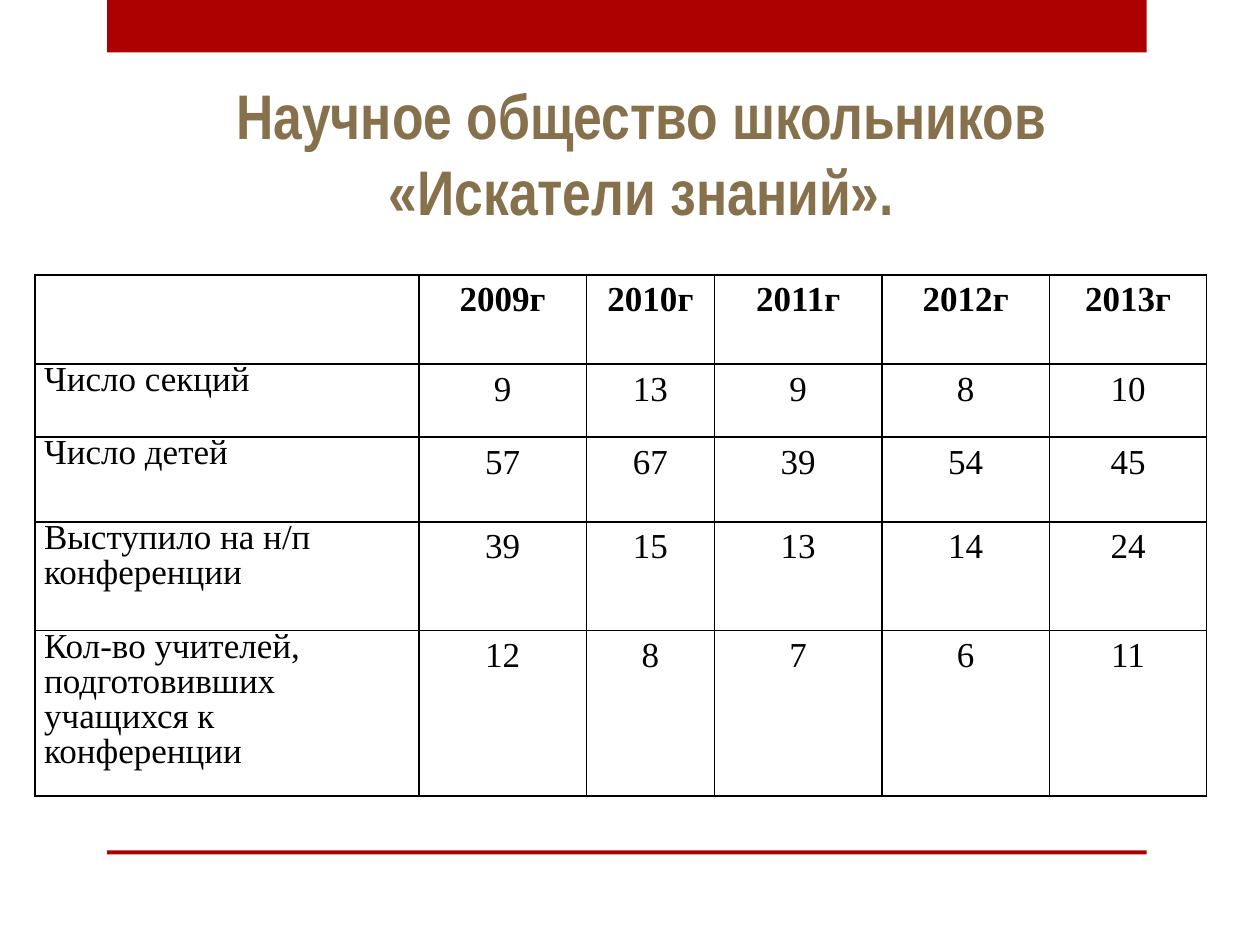
"""Builds a slide with a table about the school research society."""
from lxml.etree import SubElement
from pptx import Presentation
from pptx.dml.color import RGBColor as Rgb
from pptx.enum.shapes import MSO_SHAPE as Shape
from pptx.enum.text import MSO_ANCHOR as Anchor, PP_ALIGN as Align
from pptx.oxml.ns import qn
from pptx.util import Pt

TITLE = "Научное общество школьников «Искатели знаний»."
HEADER = ["", "2009г", "2010г", "2011г", "2012г", "2013г"]
ROWS = [
    ["Число секций", 9, 13, 9, 8, 10],
    ["Число детей", 57, 67, 39, 54, 45],
    ["Выступило на н/п конференции", 39, 15, 13, 14, 24],
    ["Кол-во учителей, подготовивших учащихся к конференции", 12, 8, 7, 6, 11],
]
JUSTIFIED_ROWS = (1, 2)
COLUMN_WIDTHS = [219.4, 95.7, 73.2, 95.7, 95.7, 89.9]
ROW_HEIGHTS = [51, 41.8, 48.4, 62.2, 94.5]
BANDS = [(0, 30), (486, 2.2)]
COLORS = {"band": "AD0101", "title": "87714D", "ink": "000000"}


def style(paragraph, font_name, size, color, bold):
    for run in paragraph.runs:
        font = run.font
        font.name, font.size, font.bold = font_name, Pt(size), bold
        font.color.rgb = Rgb.from_string(COLORS[color])


def add_band(slide, top, height):
    band = slide.shapes.add_shape(Shape.RECTANGLE, Pt(61.2), Pt(top), Pt(594), Pt(height))
    band.shadow.inherit = False
    band.fill.solid()
    band.fill.fore_color.rgb = Rgb.from_string(COLORS["band"])
    band.line.fill.background()


def add_title(slide):
    title = slide.shapes.add_textbox(Pt(99.4), Pt(43.2), Pt(534.2), Pt(90.7))
    frame = title.text_frame
    frame.text = TITLE
    frame.word_wrap = True
    frame.vertical_anchor = Anchor.BOTTOM
    frame.paragraphs[0].alignment = Align.CENTER
    style(frame.paragraphs[0], "Arial Narrow", 36, "title", True)


def add_borders(cell):
    properties = cell._tc.get_or_add_tcPr()
    for position, side in enumerate(("a:lnL", "a:lnR", "a:lnT", "a:lnB")):
        border = properties.makeelement(qn(side), {"w": str(Pt(1))})
        fill = SubElement(border, qn("a:solidFill"))
        SubElement(fill, qn("a:srgbClr"), val=COLORS["ink"])
        properties.insert(position, border)


def fill_cell(cell, content, row, column):
    cell.fill.background()
    cell.margin_left = cell.margin_right = Pt(5.2)
    cell.margin_top = cell.margin_bottom = Pt(0)
    add_borders(cell)
    cell.text = str(content)
    paragraph = cell.text_frame.paragraphs[0]
    if column:
        paragraph.alignment, paragraph.line_spacing = Align.CENTER, 1.15
    else:
        paragraph.alignment = Align.JUSTIFY if row in JUSTIFIED_ROWS else Align.LEFT
        paragraph.line_spacing = Pt(20)
    style(paragraph, "Times New Roman", 20, "ink", row == 0)


def add_society_table(slide):
    content = [HEADER] + ROWS
    table = slide.shapes.add_table(
        len(content), len(HEADER), Pt(20), Pt(157),
        Pt(sum(COLUMN_WIDTHS)), Pt(sum(ROW_HEIGHTS))).table
    table.first_row = table.horz_banding = False
    for column, width in zip(table.columns, COLUMN_WIDTHS):
        column.width = Pt(width)
    for row, height in zip(table.rows, ROW_HEIGHTS):
        row.height = Pt(height)
    for r, values in enumerate(content):
        for c, value in enumerate(values):
            fill_cell(table.cell(r, c), value, r, c)


def main():
    deck = Presentation()
    deck.slide_width, deck.slide_height = Pt(720), Pt(540)
    slide = deck.slides.add_slide(deck.slide_layouts[6])
    for top, height in BANDS:
        add_band(slide, top, height)
    add_title(slide)
    add_society_table(slide)
    deck.save("out.pptx")


if __name__ == "__main__":
    main()
